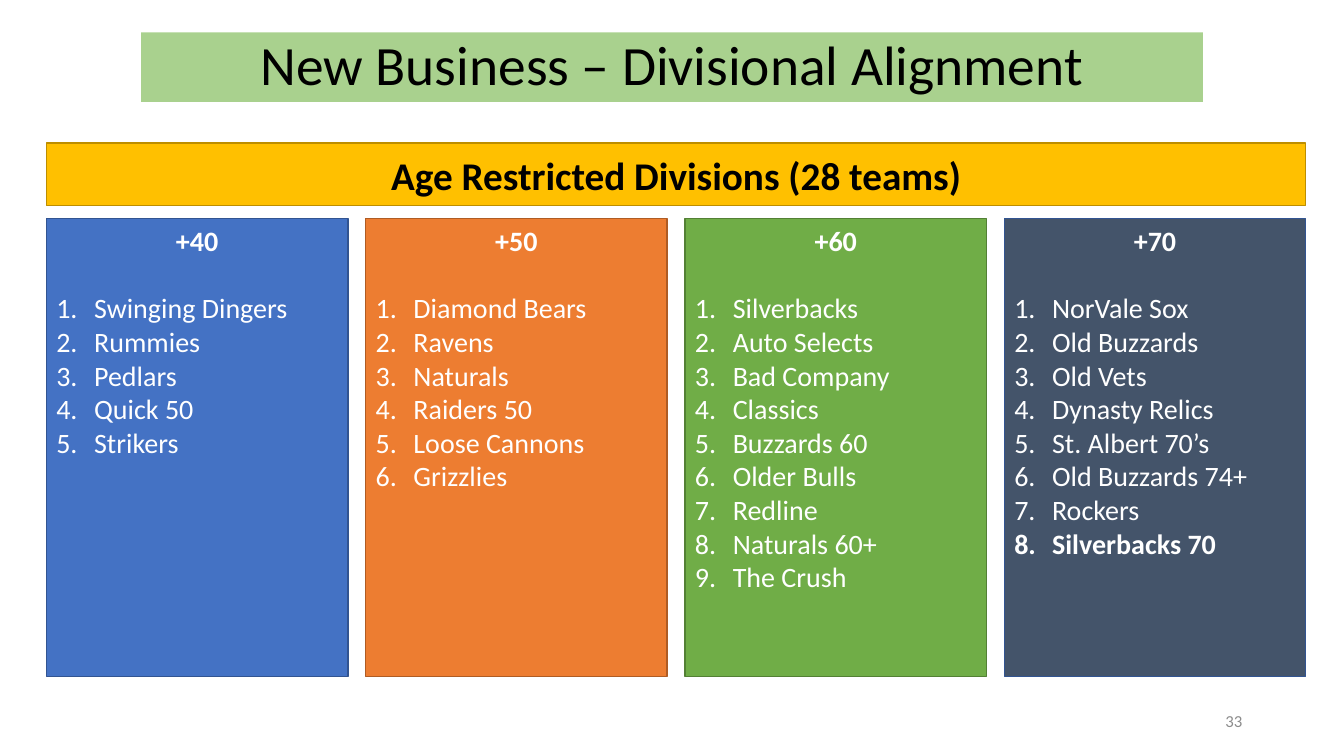
import pptx
import pptx.dml.color
import pptx.enum.shapes
import pptx.enum.text
import pptx.oxml
import pptx.oxml.ns
import pptx.util

Inches = pptx.util.Inches
Pt = pptx.util.Pt
Align = pptx.enum.text.PP_ALIGN
Anchor = pptx.enum.text.MSO_ANCHOR

DIVISIONS = [
    ("+40", "4472C4", "325491",
     ["Swinging Dingers", "Rummies", "Pedlars", "Quick 50", "Strikers"]),
    ("+50", "ED7D31", "AF5C24",
     ["Diamond Bears", "Ravens", "Naturals", "Raiders 50", "Loose Cannons", "Grizzlies"]),
    ("+60", "70AD47", "538035",
     ["Silverbacks", "Auto Selects", "Bad Company", "Classics", "Buzzards 60",
      "Older Bulls", "Redline", "Naturals 60+", "The Crush"]),
    ("+70", "44546A", "325491",
     ["NorVale Sox", "Old Buzzards", "Old Vets", "Dynasty Relics", "St. Albert 70’s",
      "Old Buzzards 74+", "Rockers", "Silverbacks 70"]),
]
NEW_TEAMS = {"Silverbacks 70"}
LEFT, COLUMN_WIDTH, COLUMN_GAP = 0.46, 2.99, 0.177
BANNER_WIDTH = len(DIVISIONS) * COLUMN_WIDTH + (len(DIVISIONS) - 1) * COLUMN_GAP


def color(hex_value):
    return pptx.dml.color.RGBColor.from_string(hex_value)


class SlideBuilder:
    """Draws styled elements on the current slide."""

    font_name = "Calibri"
    indent = 0.375

    def __init__(self, slide):
        self.slide = slide

    def place(self, shape, left, top, width, height):
        shape.left, shape.top = Inches(left), Inches(top)
        shape.width, shape.height = Inches(width), Inches(height)

    def style(self, paragraph, size, hex_value, bold=False, alignment=Align.CENTER):
        paragraph.alignment = alignment
        font = paragraph.font
        font.name, font.size, font.bold = self.font_name, Pt(size), bold
        font.color.rgb = color(hex_value)

    def number(self, paragraph):
        properties = paragraph._p.get_or_add_pPr()
        properties.set("marL", str(Inches(self.indent)))
        properties.set("indent", str(-Inches(self.indent)))
        properties.append(pptx.oxml.parse_xml(
            f'<a:buAutoNum {pptx.oxml.ns.nsdecls("a")} type="arabicPeriod"/>'))

    def title(self, text, fill, *box):
        shape = self.slide.shapes.title
        self.place(shape, *box)
        shape.fill.solid()
        shape.fill.fore_color.rgb = color(fill)
        frame = shape.text_frame
        frame.text = text
        frame.auto_size = pptx.enum.text.MSO_AUTO_SIZE.NONE
        frame.vertical_anchor = Anchor.MIDDLE
        paragraph = frame.paragraphs[0]
        paragraph.line_spacing = 0.9
        self.style(paragraph, 39.6, "000000")

    def panel(self, fill, line, anchor, *box):
        shape = self.slide.shapes.add_shape(
            pptx.enum.shapes.MSO_SHAPE.RECTANGLE, *map(Inches, box))
        shape.shadow.inherit = False
        shape.fill.solid()
        shape.fill.fore_color.rgb = color(fill)
        shape.line.color.rgb = color(line)
        shape.line.width = Pt(1)
        shape.text_frame.word_wrap = True
        shape.text_frame.vertical_anchor = anchor
        return shape.text_frame

    def banner(self, text, fill, line, *box):
        frame = self.panel(fill, line, Anchor.MIDDLE, *box)
        frame.text = text
        self.style(frame.paragraphs[0], 28, "000000", bold=True)

    def division(self, heading, fill, line, teams, *box):
        frame = self.panel(fill, line, Anchor.TOP, *box)
        frame.text = heading
        self.style(frame.paragraphs[0], 20, "FFFFFF", bold=True)
        frame.paragraphs[0].space_after = Pt(24)
        for team in teams:
            paragraph = frame.add_paragraph()
            paragraph.text = team
            self.number(paragraph)
            self.style(paragraph, 20, "FFFFFF", team in NEW_TEAMS, Align.LEFT)

    def page_number(self, text, *box):
        frame = self.slide.shapes.add_textbox(*map(Inches, box)).text_frame
        frame.word_wrap = True
        frame.vertical_anchor = Anchor.MIDDLE
        frame.text = text
        self.style(frame.paragraphs[0], 12, "8C8C8C", alignment=Align.RIGHT)


def main():
    presentation = pptx.Presentation()
    presentation.slide_width, presentation.slide_height = Inches(13.33), Inches(7.5)
    layout = presentation.slide_layouts.get_by_name("Title Only")
    builder = SlideBuilder(presentation.slides.add_slide(layout))
    builder.title("New Business – Divisional Alignment", "A9D18E", 1.4, 0.32, 10.53, 0.69)
    builder.page_number("33", 9.42, 6.95, 3, 0.4)
    for index, division in enumerate(DIVISIONS):
        left = LEFT + index * (COLUMN_WIDTH + COLUMN_GAP)
        builder.division(*division, left, 2.17, COLUMN_WIDTH, 4.54)
    builder.banner("Age Restricted Divisions (28 teams)", "FFC000", "BD8E00",
                   LEFT, 1.42, BANNER_WIDTH, 0.62)
    presentation.save("out.pptx")


if __name__ == "__main__":
    main()
